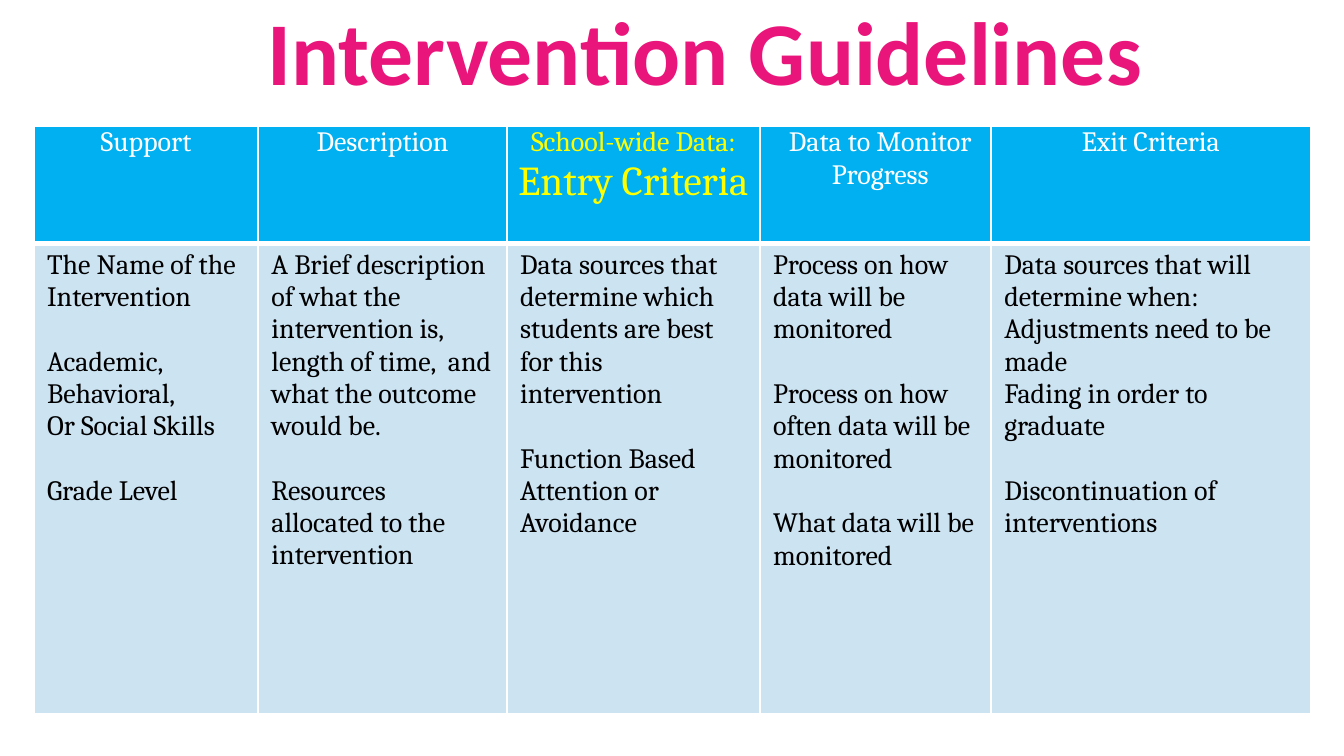
from dataclasses import dataclass
from lxml.etree import SubElement as Sub
from pptx import Presentation as Deck
from pptx.dml.color import RGBColor as Rgb
from pptx.enum.text import MSO_ANCHOR as Anchor, MSO_AUTO_SIZE as Fit, PP_ALIGN as Align
from pptx.oxml.ns import qn
from pptx.util import Cm, Pt


@dataclass(frozen=True)
class Theme:
    pink: str = "EA157A"
    blue: str = "00B0F0"
    pale: str = "CCE3F2"
    white: str = "FFFFFF"
    black: str = "000000"
    yellow: str = "FFFF00"
    head: str = "Calibri"
    body: str = "Cambria"
    title: int = 48
    text: int = 15
    large: int = 22
    gap: float = 17.4


LOOK = Theme()
WIDTHS = (4.24, 4.7, 4.78, 4.37, 6.04)
HEIGHTS = (2.21, 8.89)
HEADS = ("Support", "Description", "School-wide Data: ",
         "Data to Monitor Progress", "Exit Criteria")
ENTRY = 2
MONITOR = 3
BODY = (
    (("The Name of the Intervention",),
     ("Academic,", "Behavioral,", "Or Social Skills"),
     ("Grade Level",)),
    (("A Brief description of what the intervention is, length of time,  and "
      "what the outcome would be.",),
     ("Resources", "allocated to the intervention")),
    (("Data sources that determine which students are best for this intervention",),
     ("Function Based", "Attention or Avoidance")),
    (("Process on how data will be monitored",),
     ("Process on how often data will be monitored",),
     ("What data will be monitored",)),
    (("Data sources that will determine when:", "Adjustments need to be made",
      "Fading in order to graduate"),
     ("Discontinuation of interventions",)),
)


def write(para, text, size=LOOK.text, font=LOOK.body, color=LOOK.black,
          bold=False, align=Align.LEFT, before=0):
    para.alignment = align
    para.space_before = Pt(before)
    run = para.add_run()
    run.text = text
    run.font.size = Pt(size)
    run.font.name = font
    run.font.bold = bold
    run.font.color.rgb = Rgb.from_string(color)


def edge(cell, base):
    props = cell._tc.get_or_add_tcPr()
    for side, width in (("L", 1), ("R", 1), ("T", 1), ("B", base)):
        line = Sub(props, qn("a:ln" + side), w=str(Pt(width)))
        Sub(Sub(line, qn("a:solidFill")), qn("a:srgbClr"), val=LOOK.white)


def style(cell, fill, side, top, base=1):
    edge(cell, base)
    cell.fill.solid()
    cell.fill.fore_color.rgb = Rgb.from_string(fill)
    cell.margin_left = cell.margin_right = Cm(side)
    cell.margin_top = cell.margin_bottom = Cm(top)


def add_head(cell, col, text):
    style(cell, LOOK.blue, 0.18, 0, base=3)
    para = cell.text_frame.paragraphs[0]
    color = LOOK.yellow if col == ENTRY else LOOK.white
    write(para, text, color=color, align=Align.CENTER)
    if col == ENTRY:
        write(para, "Entry Criteria", size=LOOK.large, color=color, align=Align.CENTER)
    if col == MONITOR:
        para._p.get_or_add_pPr().set("marL", str(Cm(0.18)))


def add_body(cell, groups):
    style(cell, LOOK.pale, 0.25, 0.1)
    frame = cell.text_frame
    para = frame.paragraphs[0]
    for part, group in enumerate(groups):
        for row, text in enumerate(group):
            if part or row:
                para = frame.add_paragraph()
            write(para, text, before=LOOK.gap if part and not row else 0)


def add_grid(slide):
    table = slide.shapes.add_table(2, len(WIDTHS), Cm(0.64), Cm(2.39),
                                   Cm(sum(WIDTHS)), Cm(sum(HEIGHTS))).table
    table.first_row = table.horz_banding = False
    for row, height in zip(table.rows, HEIGHTS):
        row.height = Cm(height)
    for col, width in enumerate(WIDTHS):
        table.columns[col].width = Cm(width)
        add_head(table.cell(0, col), col, HEADS[col])
        add_body(table.cell(1, col), BODY[col])


def add_title(slide):
    title = slide.shapes.title
    title.left, title.top, title.width, title.height = Cm(1.9), Cm(1.42), Cm(22.86), Cm(0.53)
    frame = title.text_frame
    frame.auto_size = Fit.NONE
    frame.word_wrap = True
    frame.vertical_anchor = Anchor.BOTTOM
    frame.margin_top = frame.margin_bottom = 0
    write(frame.paragraphs[0], "Intervention Guidelines", size=LOOK.title,
          font=LOOK.head, color=LOOK.pink, bold=True, align=Align.CENTER)


def main():
    deck = Deck()
    deck.slide_width, deck.slide_height = Cm(25.4), Cm(14.28)
    slide = deck.slides.add_slide(deck.slide_layouts[5])
    add_grid(slide)
    add_title(slide)
    deck.save("out.pptx")


if __name__ == "__main__":
    main()
